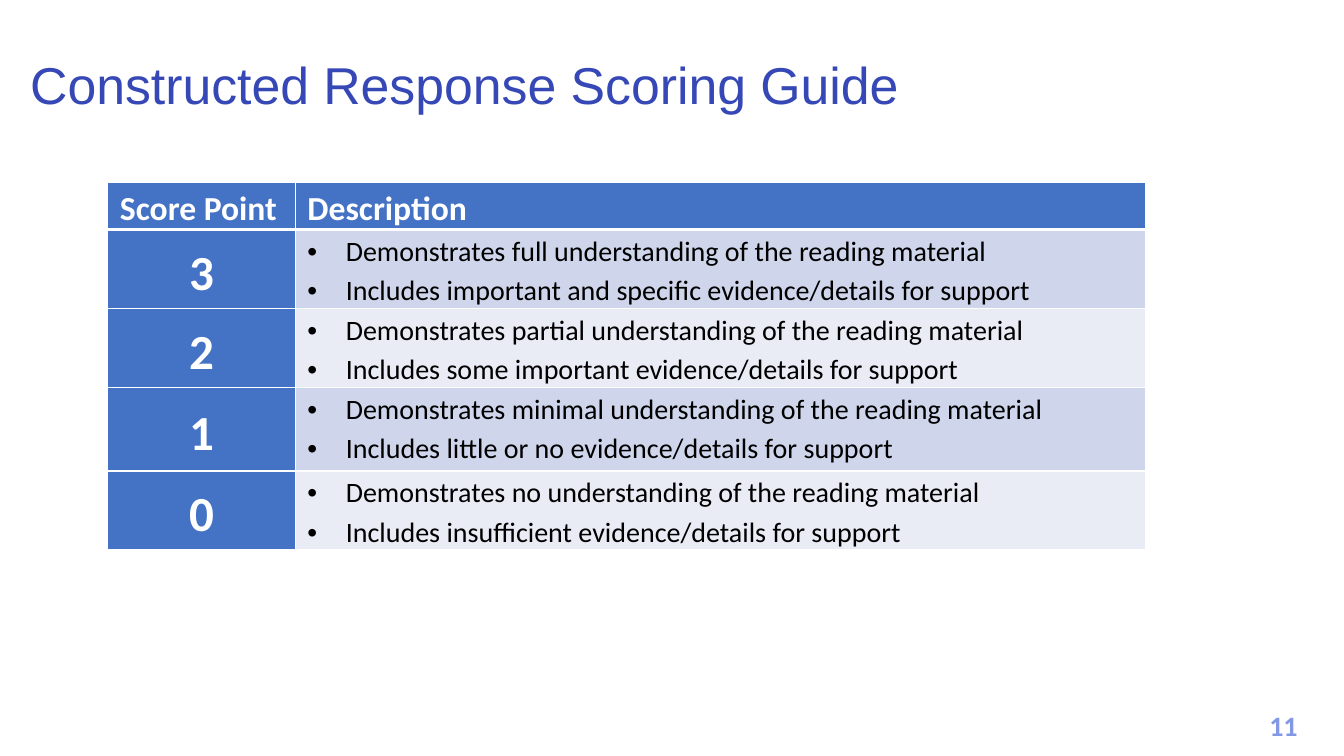
from dataclasses import dataclass

from lxml import etree
from pptx import Presentation
from pptx.dml.color import RGBColor
from pptx.enum import text
from pptx.oxml import ns
from pptx.util import Inches, Pt


@dataclass(frozen=True)
class Theme:
    # Colours
    title: str = "3647B6"
    number: str = "8397E7"
    header: str = "4472C4"
    bands: tuple = ("CFD5EA", "E9EBF5")
    light: str = "FFFFFF"
    dark: str = "000000"
    # Fonts and sizes
    title_font: str = "Arial"
    body_font: str = "Calibri"
    title_size: int = 37
    score_size: int = 35
    header_size: int = 24
    body_size: int = 20


def write(frame, content, *, font, size, color, bold=False, align=None,
          spacing=None, bullet_indent=None):
    """Fill a text frame, one paragraph per line of content."""
    for index, line in enumerate(content.split("\n")):
        paragraph = frame.add_paragraph() if index else frame.paragraphs[0]
        paragraph.text = line
        paragraph.alignment = align
        paragraph.line_spacing = spacing
        if bullet_indent:
            properties = paragraph._p.get_or_add_pPr()
            properties.set("marL", str(bullet_indent))
            properties.set("indent", str(-bullet_indent))
            etree.SubElement(properties, ns.qn("a:buFont"), typeface="Arial")
            etree.SubElement(properties, ns.qn("a:buChar"), char="•")
        run_font = paragraph.runs[0].font
        run_font.name = font
        run_font.size = Pt(size)
        run_font.bold = bold
        run_font.color.rgb = RGBColor.from_string(color)


class SlideBuilder:
    def __init__(self, presentation, theme):
        self.theme = theme
        self.slide = presentation.slides.add_slide(presentation.slide_layouts[5])

    def title(self, content, left, top, width, height):
        shape = self.slide.shapes.title
        shape.left, shape.top = Inches(left), Inches(top)
        shape.width, shape.height = Inches(width), Inches(height)
        frame = shape.text_frame
        frame.word_wrap = True
        frame.auto_size = text.MSO_AUTO_SIZE.NONE
        frame.vertical_anchor = text.MSO_ANCHOR.BOTTOM
        write(frame, content, font=self.theme.title_font,
              size=self.theme.title_size, color=self.theme.title,
              align=text.PP_ALIGN.LEFT, spacing=0.9)

    def page_number(self, content, left, top, width, height):
        box = self.slide.shapes.add_textbox(
            Inches(left), Inches(top), Inches(width), Inches(height))
        box.text_frame.word_wrap = True
        write(box.text_frame, content, font=self.theme.body_font,
              size=self.theme.body_size, color=self.theme.number, bold=True,
              align=text.PP_ALIGN.CENTER)

    def borders(self, cell, bottom_width):
        properties = cell._tc.get_or_add_tcPr()
        widths = {"lnL": 1, "lnR": 1, "lnT": 1, "lnB": bottom_width}
        for side, width in widths.items():
            line = etree.SubElement(properties, ns.qn(f"a:{side}"), w=str(Pt(width)))
            fill = etree.SubElement(line, ns.qn("a:solidFill"))
            etree.SubElement(fill, ns.qn("a:srgbClr"), val=self.theme.light)

    def cell(self, cell, content, fill, bottom_width=1, centered=False, **style):
        self.borders(cell, bottom_width)
        cell.fill.solid()
        cell.fill.fore_color.rgb = RGBColor.from_string(fill)
        cell.margin_left = cell.margin_right = Inches(0.12)
        cell.margin_top = cell.margin_bottom = 0
        if centered:
            cell.vertical_anchor = text.MSO_ANCHOR.MIDDLE
            style["align"] = text.PP_ALIGN.CENTER
        write(cell.text_frame, content, font=self.theme.body_font,
              spacing=1.15, **style)

    def scoring_table(self, headings, scores, left, top, widths, heights):
        theme = self.theme
        table = self.slide.shapes.add_table(
            len(heights), len(widths), Inches(left), Inches(top),
            Inches(sum(widths)), Inches(sum(heights))).table
        for column, width in zip(table.columns, widths):
            column.width = Inches(width)
        for row, height in zip(table.rows, heights):
            row.height = Inches(height)

        # Header row
        for column, heading in enumerate(headings):
            self.cell(table.cell(0, column), heading, theme.header,
                      bottom_width=3, size=theme.header_size,
                      color=theme.light, bold=True)

        # Score rows with alternating bands
        for index, (score, description) in enumerate(scores):
            self.cell(table.cell(index + 1, 0), score, theme.header,
                      centered=True, size=theme.score_size,
                      color=theme.light, bold=True)
            self.cell(table.cell(index + 1, 1), description,
                      theme.bands[index % 2], size=theme.body_size,
                      color=theme.dark, bullet_indent=Inches(0.38))


SCORES = [
    ("3", "Demonstrates full understanding of the reading material\n"
          "Includes important and specific evidence/details for support"),
    ("2", "Demonstrates partial understanding of the reading material\n"
          "Includes some important evidence/details for support"),
    ("1", "Demonstrates minimal understanding of the reading material\n"
          "Includes little or no evidence/details for support"),
    ("0", "Demonstrates no understanding of the reading material\n"
          "Includes insufficient evidence/details for support"),
]


def main():
    presentation = Presentation()
    presentation.slide_width = Inches(13.33)
    presentation.slide_height = Inches(7.5)

    builder = SlideBuilder(presentation, Theme())
    builder.title("Constructed Response Scoring Guide", 0.2, 0.32, 12.02, 0.88)
    builder.scoring_table(["Score Point", "Description"], SCORES, 1.07, 1.81,
                          widths=[1.86, 8.43],
                          heights=[0.44, 0.71, 0.71, 0.83, 0.71])
    builder.page_number("11", 12.42, 6.98, 0.62, 0.44)

    presentation.save("out.pptx")


if __name__ == "__main__":
    main()
